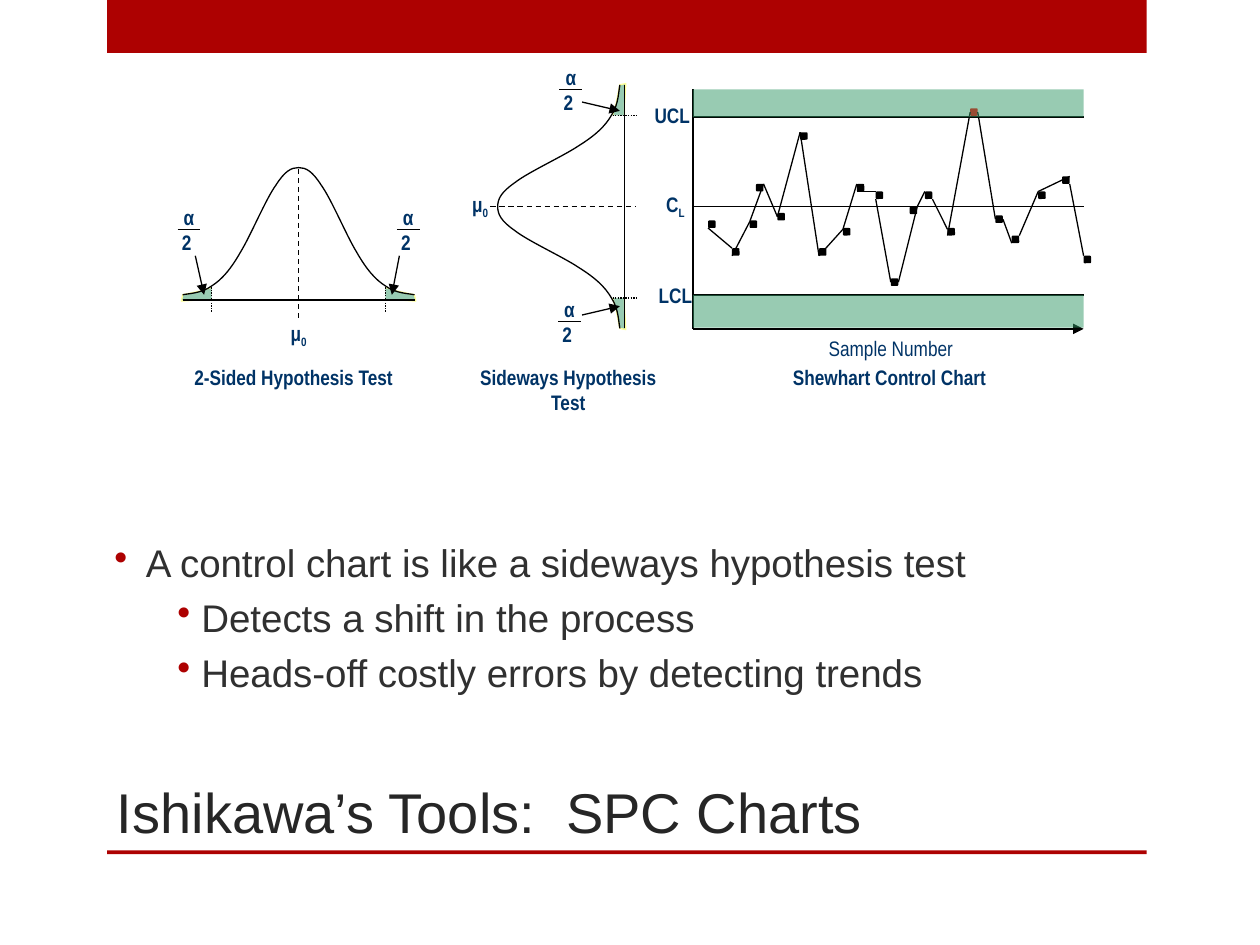
from dataclasses import dataclass
from lxml.etree import SubElement
from pptx import Presentation
from pptx.dml.color import RGBColor
from pptx.enum.dml import MSO_LINE
from pptx.enum.shapes import MSO_CONNECTOR, MSO_SHAPE
from pptx.enum.text import MSO_ANCHOR, PP_ALIGN
from pptx.oxml.ns import qn
from pptx.util import Inches, Pt


@dataclass(frozen=True)
class Theme:
    red: str = "AD0101"
    black: str = "000000"
    alarm: str = "FF0000"
    green: str = "339966"
    glow: str = "FFFF99"
    navy: str = "003366"
    head: str = "262626"
    body: str = "303030"
    sans: str = "Arial"
    slim: str = "Arial Narrow"
    big: int = 32
    mid: int = 22
    small: int = 12


class Board:
    def __init__(self, slide, theme):
        self.shapes, self.theme = slide.shapes, theme

    def paint(self, shape, color, alpha=None):
        shape.shadow.inherit = False
        shape.fill.solid()
        shape.fill.fore_color.rgb = RGBColor.from_string(color)
        if alpha:
            tint = shape._element.spPr.find(qn("a:solidFill"))[0]
            SubElement(tint, qn("a:alpha"), val=str(alpha * 1000))

    def pen(self, line, color, width):
        line.color.rgb = RGBColor.from_string(color)
        line.width = Pt(width)

    def box(self, x, y, w, h, color, alpha=None, kind=MSO_SHAPE.RECTANGLE):
        shape = self.shapes.add_shape(kind, *map(Inches, (x, y, w, h)))
        self.paint(shape, color, alpha)
        shape.line.fill.background()
        return shape

    def rule(self, start, end, width=0.75, dash=None, arrow=False):
        link = self.shapes.add_connector(
            MSO_CONNECTOR.STRAIGHT, *map(Inches, (*start, *end)))
        self.pen(link.line, self.theme.black, width)
        if dash:
            link.line.dash_style = dash
        props = link._element.spPr
        if arrow:
            SubElement(props.find(qn("a:ln")), qn("a:tailEnd"), type="triangle")
        SubElement(props, qn("a:effectLst"))
        return link

    def trace(self, points):
        pts = [(Inches(x), Inches(y)) for x, y in points]
        pen = self.shapes.build_freeform(*pts[0])
        pen.add_line_segments(pts[1:], close=False)
        shape = pen.convert_to_shape()
        shape.shadow.inherit = False
        return shape

    def patch(self, points):
        shape = self.trace(points)
        self.paint(shape, self.theme.green, 50)
        self.pen(shape.line, self.theme.glow, 0.75)

    def curve(self, points):
        shape = self.trace(points)
        shape.fill.background()
        self.pen(shape.line, self.theme.black, 0.75)
        # Turn each three line steps into one cubic Bézier step
        track = next(shape._element.iter(qn("a:path")))
        steps = track.findall(qn("a:lnTo"))
        for i in range(0, len(steps), 3):
            bend = SubElement(track, qn("a:cubicBezTo"))
            for step in steps[i:i + 3]:
                bend.append(step[0])
                track.remove(step)

    def frame(self, x, y, w, h, inset=0.0, anchor=MSO_ANCHOR.TOP):
        text = self.shapes.add_textbox(*map(Inches, (x, y, w, h))).text_frame
        look = dict(word_wrap=True, vertical_anchor=anchor,
                    margin_left=Inches(inset), margin_right=Inches(inset),
                    margin_top=Inches(inset / 2), margin_bottom=Inches(inset / 2))
        for key, value in look.items():
            setattr(text, key, value)
        return text

    def put(self, para, words, name, size, color, bold=False):
        run = para.add_run()
        run.text = words
        for key, value in dict(name=name, size=Pt(size), bold=bold).items():
            setattr(run.font, key, value)
        run.font.color.rgb = RGBColor.from_string(color)
        return run

    def label(self, x, y, w, h, *lines, sub="", bold=True):
        look = self.theme.slim, self.theme.small, self.theme.navy, bold
        text = self.frame(x, y, w, h)
        for i, words in enumerate(lines):
            para = text.paragraphs[0] if i == 0 else text.add_paragraph()
            para.alignment = PP_ALIGN.CENTER
            self.put(para, words, *look)
        if sub:
            run = self.put(para, sub, *look)
            run.font._element.set("baseline", "-25000")

    def ratio(self, x, y):
        self.label(x, y, 0.18, 0.41, "α", "2 ")
        self.rule((x, y + 0.2), (x + 0.18, y + 0.2))

    def title(self, x, y, w, h, words):
        text = self.frame(x, y, w, h, 0.1, MSO_ANCHOR.BOTTOM)
        self.put(text.paragraphs[0], words, self.theme.sans,
                 self.theme.big, self.theme.head)

    def points(self, x, y, w, h, items):
        text = self.frame(x, y, w, h, 0.1, MSO_ANCHOR.MIDDLE)
        for i, (level, words) in enumerate(items):
            para = text.paragraphs[0] if i == 0 else text.add_paragraph()
            para.level, para.space_before = level, Pt(5)
            left, hang = ((0.25, -0.25), (0.69, -0.19))[level]
            props = para._p.get_or_add_pPr()
            props.set("marL", str(Inches(left)))
            props.set("indent", str(Inches(hang)))
            tint = SubElement(props, qn("a:buClr"))
            SubElement(tint, qn("a:srgbClr"), val=self.theme.red)
            SubElement(props, qn("a:buChar"), char="•")
            self.put(para, words, self.theme.sans, self.theme.mid, self.theme.body)


# Bell shape: distance from the mean, depth below the peak
HALF = [(-0.92, 1.01), (-0.88, 1), (-0.77, 1), (-0.69, 0.94), (-0.61, 0.89),
        (-0.54, 0.81), (-0.46, 0.67), (-0.38, 0.54), (-0.26, 0.25),
        (-0.18, 0.14), (-0.11, 0.03), (-0.06, 0), (0, 0)]
BELL = HALF + [(-d, h) for d, h in HALF[-2::-1]]
TAIL = [(0.69, 1.05), (0.78, 1.05), (0.93, 1.06), (0.92, 1.01),
        (0.78, 0.98), (0.69, 0.95)]

# Control chart samples (top left of each dot) and the lines between them
SIZE = 0.06
DOTS = [(5.62, 1.75), (5.81, 1.97), (5.95, 1.75), (6, 1.46), (6.17, 1.69),
        (6.35, 1.05), (6.5, 1.97), (6.69, 1.81), (6.8, 1.46), (6.95, 1.52),
        (7.07, 2.21), (7.22, 1.64), (7.34, 1.52), (7.52, 1.81), (7.7, 0.86),
        (7.9, 1.71), (8.03, 1.87), (8.24, 1.52), (8.43, 1.4), (8.6, 2.03)]
ALARM = (7.7, 0.86)
RUNS = [[(5.62, 1.81), (5.81, 1.97)],
        [(5.81, 2.03), (5.95, 1.76), (6.06, 1.46), (6.17, 1.71), (6.35, 1.05),
         (6.5, 2.03), (6.69, 1.82), (6.8, 1.46)],
        [(6.8, 1.52), (6.95, 1.52)], [(6.95, 1.58), (7.07, 2.24)],
        [(7.13, 2.24), (7.28, 1.64), (7.34, 1.52)], [(7.4, 1.58), (7.52, 1.82)],
        [(7.52, 1.87), (7.7, 0.88)], [(7.76, 0.88), (7.9, 1.75)],
        [(7.96, 1.75), (8.03, 1.93)], [(8.09, 1.87), (8.24, 1.52), (8.49, 1.4)],
        [(8.49, 1.46), (8.6, 2.03)]]


def flat(d, h):
    return 2.37 + d, 1.33 + h


def side(d, h):
    return 3.95 + 0.96 * h, 1.64 + 1.05 * d


def draw_bell(board, place, top):
    for sign in (-1, 1):
        board.patch([place(sign * d, h) for d, h in TAIL])
        board.rule(place(sign * 0.69, 0.95), place(sign * 0.69, 1.15),
                   dash=MSO_LINE.ROUND_DOT)
    board.rule(place(0, top), place(0, top + 1.2), dash=MSO_LINE.DASH)
    board.rule(place(-0.92, 1.05), place(0.92, 1.05))
    board.curve([place(d, h) for d, h in BELL])


def draw_chart(board):
    tone = board.theme
    left, right, top, base = 5.5, 8.6, 0.71, 2.61
    board.rule((left, top), (left, base), 1.5)
    board.rule((left, base), (right, base), 1.5, arrow=True)
    for y in (0.93, 1.64, 2.34):
        board.rule((left, y), (right, y), 1)
    board.label(5.17, 0.81, 0.33, 0.22, "UCL")
    board.label(5.22, 1.52, 0.28, 0.24, "C", sub="L")
    board.label(5.22, 2.24, 0.28, 0.24, "LCL")
    board.label(6.56, 2.66, 1.02, 0.24, "Sample Number", bold=False)
    # Samples, with lines joined where they meet the middle of a side
    ports = []
    for x, y in DOTS:
        color = tone.alarm if (x, y) == ALARM else tone.black
        dot = board.box(x, y, SIZE, SIZE, color, kind=MSO_SHAPE.ROUNDED_RECTANGLE)
        ports += [(x, y + SIZE / 2, dot, 1), (x + SIZE, y + SIZE / 2, dot, 3)]
    for run in RUNS:
        for ends in zip(run, run[1:]):
            link = board.rule(*ends)
            for (x, y), join in zip(ends, (link.begin_connect, link.end_connect)):
                for px, py, dot, site in ports:
                    if abs(px - x) < 0.01 and abs(py - y) < 0.015:
                        join(dot, site)
    # Zones beyond the limits
    for y, h in ((2.34, 0.26), (top, 0.22)):
        board.box(left, y, right - left, h, tone.green, 50)


def main():
    deck = Presentation()
    deck.slide_width, deck.slide_height = Inches(10), Inches(7.5)
    tone = Theme()
    board = Board(deck.slides.add_slide(deck.slide_layouts[6]), tone)
    # Page bars and text
    for y, h in ((0, 0.42), (6.75, 0.03)):
        board.box(0.85, y, 8.25, h, tone.red)
    board.title(0.83, 5.7, 8.32, 1.05, "Ishikawa’s Tools:  SPC Charts")
    board.points(0.81, 3.49, 8.25, 2.82, [
        (0, "A control chart is like a sideways hypothesis test"),
        (1, "Detects a shift in the process"),
        (1, "Heads-off costly errors by detecting trends")])
    # Hypothesis tests, upright and sideways
    draw_bell(board, flat, 0.01)
    draw_bell(board, side, -0.06)
    for x, y in ((2.23, 2.54), (3.67, 1.52)):
        board.label(x, y, 0.28, 0.35, "μ", sub="0")
    for spot in ((1.41, 1.62), (3.15, 1.62), (4.44, 0.51), (4.43, 2.35)):
        board.ratio(*spot)
    for start, end in (((1.55, 2.03), (1.62, 2.34)), ((3.17, 2.03), (3.11, 2.34)),
                       ((4.62, 2.5), (4.92, 2.43)), ((4.62, 0.81), (4.92, 0.88))):
        board.rule(start, end, arrow=True)
    draw_chart(board)
    # Captions
    for x, words in ((1.49, "2-Sided Hypothesis Test"),
                     (3.67, "Sideways Hypothesis Test"),
                     (6.22, "Shewhart Control Chart")):
        board.label(x, 2.89, 1.68, 0.24, words)
    deck.save("out.pptx")


if __name__ == "__main__":
    main()
